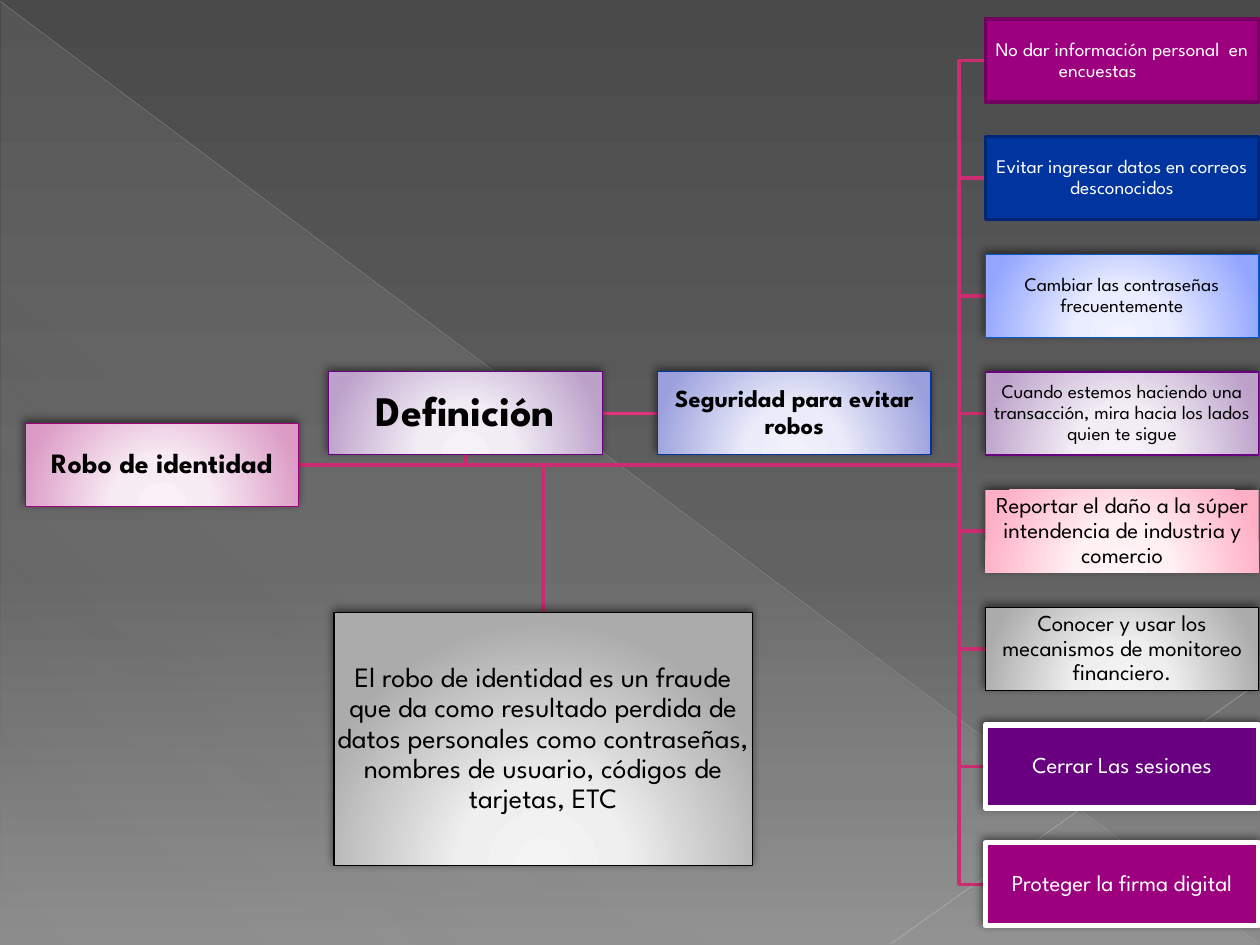
import pptx
import pptx.dml.color
import pptx.enum.shapes
import pptx.enum.text
import pptx.oxml
import pptx.oxml.ns
import pptx.util

Inches = pptx.util.Inches
Pt = pptx.util.Pt
qn = pptx.oxml.ns.qn
NAMESPACE = 'xmlns:a="http://schemas.openxmlformats.org/drawingml/2006/main"'
FONT = "League Spartan"

COLORS = {
    "black": "000000", "white": "FFFFFF", "magenta": "9C007F", "wine": "73005E",
    "blue": "00349E", "navy": "002675", "azure": "005BD3", "purple": "68007F",
    "branch": "CC2D70", "link": "E7337F", "facet": "D2D2D2",
    "diagonal": "BFBFBF", "corner": "C6C6C6",
}
# Radial fills: colours at 0, 34 and 100 percent
GLOWS = {
    "rose": ("FBF0F7", "F8ECF4", "DB9BC5"),
    "sky": ("F0F2FF", "EAEDFF", "92A5FF"),
    "lilac": ("F6F1F8", "F2EDF5", "BCA1CA"),
    "pink": ("FFF4F7", "FFF0F3", "FFAFC5"),
    "gray": ("F4F4F4", "EFEFEF", "ABABAB"),
    "indigo": ("F0F1FB", "EBECF9", "9BA0DD"),
}
# Gradient stops: percent, colour, opacity percent
BACKDROP = [(0, "4A4A4A", 100), (60, "626262", 100), (100, "8C8C8C", 100)]
FACET = [(0, COLORS["facet"], 10), (70, COLORS["facet"], 8), (100, COLORS["facet"], 1)]

BOX = (2.17, 0.66)
ROOT_RIGHT, BUS_Y = 2.37, 3.69
TRUNK_X, MEASURE_LEFT = 7.61, 7.82
MEASURE_TOP, MEASURE_PITCH = 0.15, 0.934

# text, fill, line colour, line width, font size, shadow
MEASURES = [
    ("No dar información personal  en encuestas\t", "magenta", "wine", 2, 11, False),
    ("Evitar ingresar datos en correos desconocidos", "blue", "navy", 2, 11, False),
    ("Cambiar las contraseñas frecuentemente", "sky", "azure", 0.75, 11, True),
    ("Cuando estemos haciendo una transacción, mira hacia los lados quien te sigue",
     "lilac", "purple", 0.75, 11, True),
    ("Reportar el daño a la súper intendencia de industria y comercio",
     "pink", None, 0, 13, True),
    ("Conocer y usar los mecanismos de monitoreo financiero.",
     "gray", "black", 0.75, 13, True),
    ("Cerrar Las sesiones", "purple", "white", 3, 13, True),
    ("Proteger la firma digital", "magenta", "white", 3, 13, True),
]
# left, top, width, height, text, fill, line colour, font size, bold
TOPICS = [
    (0.2, 3.36, *BOX, "Robo de identidad", "rose", "magenta", 16, True),
    (2.61, 2.95, *BOX, "Definición", "lilac", "purple", 24, True),
    (5.22, 2.95, *BOX, "Seguridad para evitar robos", "indigo", "blue", 14, True),
    (2.65, 4.86, 3.32, 2.01,
     "El robo de identidad es un fraude que da como resultado perdida de datos "
     "personales como contraseñas, nombres de usuario, códigos de tarjetas, ETC",
     "gray", "black", 16, False),
]


def rgb(name):
    return pptx.dml.color.RGBColor.from_string(COLORS[name])


def set_gradient(fill, parent, stops, angle=None):
    """Fill parent linearly at an angle, or radially from below when there is none."""
    fill.solid()
    stop_xml = "".join(
        f'<a:gs pos="{position * 1000}"><a:srgbClr val="{color}">'
        f'<a:alpha val="{opacity * 1000}"/></a:srgbClr></a:gs>'
        for position, color, opacity in stops)
    if angle is None:
        direction = ('<a:path path="circle"><a:fillToRect l="50000" t="155000" '
                     'r="50000" b="-55000"/></a:path>')
    else:
        direction = f'<a:lin ang="{angle * 60000}" scaled="0"/>'
    gradient = pptx.oxml.parse_xml(
        f'<a:gradFill {NAMESPACE} rotWithShape="1"><a:gsLst>{stop_xml}</a:gsLst>'
        f'{direction}</a:gradFill>')
    parent.replace(parent.find(qn("a:solidFill")), gradient)


def add_shadow(shape):
    shape.element.spPr.find(qn("a:effectLst")).append(pptx.oxml.parse_xml(
        f'<a:outerShdw {NAMESPACE} blurRad="{Pt(5)}" dist="{Pt(2)}" dir="{245 * 60000}" '
        'algn="tl" rotWithShape="0"><a:srgbClr val="000000"><a:alpha val="50000"/>'
        '</a:srgbClr></a:outerShdw>'))


def add_line(shapes, start, end, color, width, opacity=100):
    line = shapes.add_connector(pptx.enum.shapes.MSO_CONNECTOR.STRAIGHT,
                                *map(Inches, start + end))
    line.line.color.rgb = rgb(color)
    line.line.width = Pt(width)
    properties = line.element.spPr
    properties.find(".//" + qn("a:srgbClr")).append(
        pptx.oxml.parse_xml(f'<a:alpha {NAMESPACE} val="{opacity * 1000}"/>'))
    properties.append(pptx.oxml.parse_xml(f"<a:effectLst {NAMESPACE}/>"))


def add_branch(shapes, *points):
    corners = [(Inches(x), Inches(y)) for x, y in points]
    builder = shapes.build_freeform(*corners[0])
    builder.add_line_segments(corners[1:], close=False)
    branch = builder.convert_to_shape()
    branch.fill.background()
    branch.line.color.rgb = rgb("branch")
    branch.line.width = Pt(2)
    branch.shadow.inherit = False


def add_box(shapes, place, text, fill, line, line_width, size, bold=False, shadow=True):
    box = shapes.add_shape(pptx.enum.shapes.MSO_SHAPE.RECTANGLE, *map(Inches, place))
    box.shadow.inherit = False
    if fill in GLOWS:
        stops = [(at, color, 100) for at, color in zip((0, 34, 100), GLOWS[fill])]
        set_gradient(box.fill, box.element.spPr, stops)
    else:
        box.fill.solid()
        box.fill.fore_color.rgb = rgb(fill)
    if line:
        box.line.color.rgb = rgb(line)
        box.line.width = Pt(line_width)
    else:
        box.line.fill.background()
    if shadow:
        add_shadow(box)

    frame = box.text_frame
    frame_format = {"word_wrap": True, "vertical_anchor": pptx.enum.text.MSO_ANCHOR.MIDDLE}
    for side in ("left", "top", "right", "bottom"):
        frame_format["margin_" + side] = Inches(0.01)
    for name, value in frame_format.items():
        setattr(frame, name, value)
    paragraph = frame.paragraphs[0]
    paragraph.alignment = pptx.enum.text.PP_ALIGN.CENTER
    paragraph.line_spacing = 0.9
    run = paragraph.add_run()
    run.text = text
    for name, value in {"name": FONT, "size": Pt(size), "bold": bold}.items():
        setattr(run.font, name, value)
    run.font.color.rgb = rgb("black" if fill in GLOWS else "white")


def add_backdrop(slide):
    fill = slide.background.fill
    fill.solid()
    set_gradient(fill, slide.element.cSld.bg.bgPr, BACKDROP, 90)
    facet = slide.shapes.add_shape(pptx.enum.shapes.MSO_SHAPE.RIGHT_TRIANGLE,
                                   *map(Inches, (0.01, 0.02, 9.98, 7.48)))
    facet.shadow.inherit = False
    facet.line.fill.background()
    set_gradient(facet.fill, facet.element.spPr, FACET, 133)
    add_line(slide.shapes, (0, 0.01), (9.99, 7.49), "diagonal", 0.39, 35)
    add_line(slide.shapes, (10, 5.41), (7.07, 7.49), "corner", 0.47, 45)


def main():
    presentation = pptx.Presentation()
    presentation.slide_width, presentation.slide_height = Inches(10), Inches(7.5)
    slide = presentation.slides.add_slide(presentation.slide_layouts[6])
    shapes = slide.shapes
    add_backdrop(slide)

    root = (ROOT_RIGHT, BUS_Y)
    add_branch(shapes, root, (4.31, BUS_Y), (4.31, 4.86))
    add_line(shapes, (4.78, 3.28), (5.22, 3.28), "link", 2)
    add_branch(shapes, root, (3.7, BUS_Y), (3.7, 3.61))
    tops = [MEASURE_TOP + MEASURE_PITCH * row for row in range(len(MEASURES))]
    for top in tops:
        middle = top + BOX[1] / 2
        add_branch(shapes, root, (TRUNK_X, BUS_Y), (TRUNK_X, middle), (MEASURE_LEFT, middle))

    for top, (text, fill, line, width, size, shadow) in zip(tops, MEASURES):
        add_box(shapes, (MEASURE_LEFT, top, *BOX), text, fill, line, width, size, shadow=shadow)
    for *place, text, fill, line, size, bold in TOPICS:
        add_box(shapes, place, text, fill, line, 0.75, size, bold)
    presentation.save("out.pptx")


if __name__ == "__main__":
    main()
